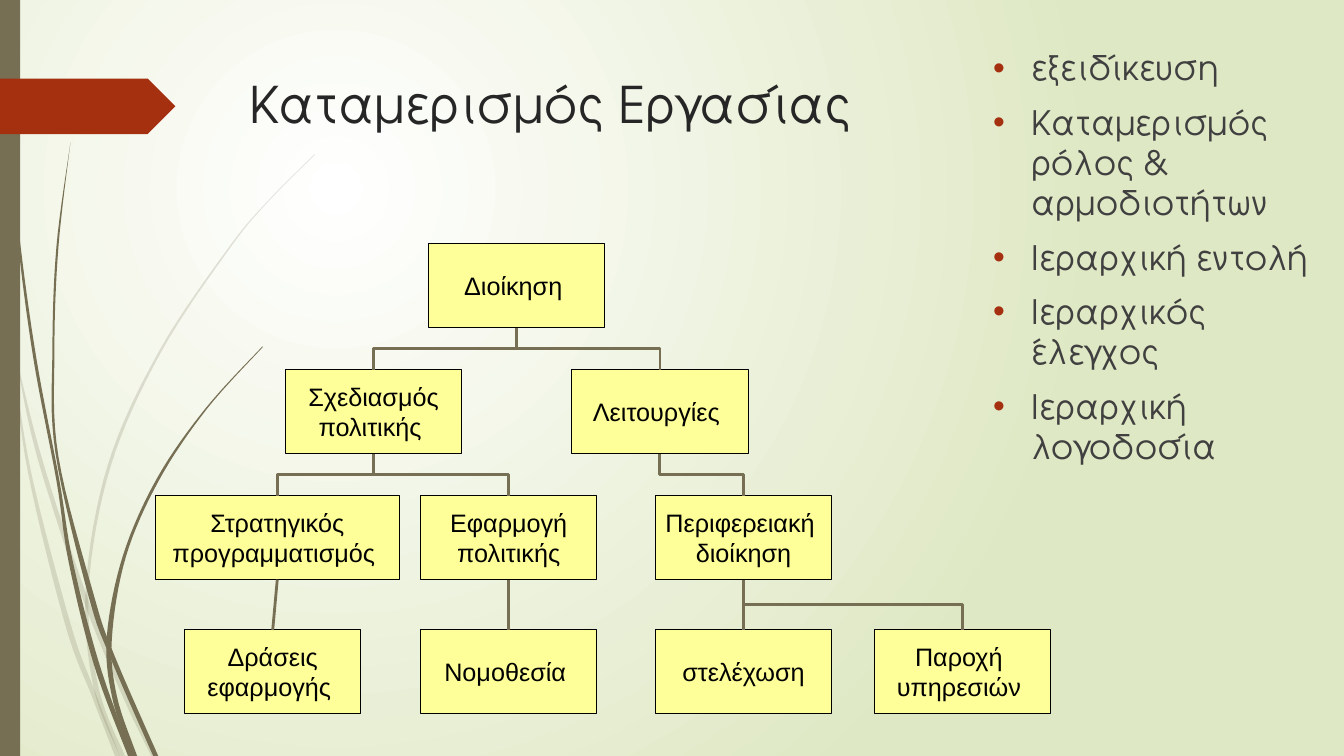
import pptx
import pptx.dml.color
import pptx.enum.dml
import pptx.enum.shapes
import pptx.enum.text
import pptx.oxml
import pptx.oxml.ns
import pptx.util
from lxml import etree

Inches, Pt = pptx.util.Inches, pptx.util.Pt
RGBColor = pptx.dml.color.RGBColor
qn = pptx.oxml.ns.qn
SHAPES = pptx.enum.shapes.MSO_SHAPE
CONNECTORS = pptx.enum.shapes.MSO_CONNECTOR
ALIGN = pptx.enum.text.PP_ALIGN
ANCHOR = pptx.enum.text.MSO_ANCHOR

WHITE = RGBColor(0xFF, 0xFF, 0xFF)
PALE_GREEN = RGBColor(0xDF, 0xE8, 0xC4)
OLIVE = RGBColor(0x76, 0x6F, 0x54)
RUST = RGBColor(0xA5, 0x30, 0x10)
YELLOW = RGBColor(0xFF, 0xFF, 0x99)
BLACK = RGBColor(0, 0, 0)
TITLE_GREY = RGBColor(0x26, 0x26, 0x26)
BODY_GREY = RGBColor(0x40, 0x40, 0x40)

HEADING_FONT = "TeX Gyre Adventor"
CHART_FONT = "Arial"

# Grass blades: left edge and right edge, both from tip to root, in inches
PALE_BLADES = [
    ([(0, 2.99), (0.11, 3.5), (0.28, 4.7), (0.65, 6.21), (0.92, 6.93), (1.14, 7.5)],
     [(0, 2.82), (0.12, 3.5), (0.31, 4.69), (0.7, 6.19), (0.93, 6.83), (1.19, 7.5)]),
    ([(0.14, 3.45), (0.32, 4.35), (0.58, 5.22), (0.88, 6.1), (1.23, 6.94), (1.5, 7.5)],
     [(0.14, 3.45), (0.36, 4.35), (0.62, 5.2), (0.92, 6.07), (1.27, 6.92), (1.55, 7.5)]),
    ([(3.12, 1.53), (2.68, 1.97), (2.28, 2.44), (1.58, 3.48), (1.07, 4.61),
      (0.85, 5.84), (0.93, 6.83), (1.19, 7.5)],
     [(3.12, 1.54), (2.68, 1.98), (2.29, 2.45), (1.6, 3.49), (1.1, 4.62),
      (0.88, 5.84), (0.98, 6.83), (1.24, 7.5)]),
]
DARK_BLADES = [
    ([(0.03, 0), (0.07, 1.1), (0.17, 2.33), (0.33, 3.55), (0.56, 4.77),
      (0.68, 5.57), (0.93, 6.59), (1.27, 7.5)],
     [(0.04, 0), (0.08, 1.09), (0.19, 2.32), (0.36, 3.55), (0.59, 4.77),
      (0.72, 5.56), (0.98, 6.57), (1.31, 7.5)]),
    ([(0.7, 1.41), (0.56, 2.45), (0.52, 3.49), (0.55, 4.49), (0.88, 5.92),
      (1.11, 6.56), (1.52, 7.5)],
     [(0.7, 1.41), (0.58, 2.45), (0.54, 3.49), (0.58, 4.53), (0.93, 5.9),
      (1.13, 6.49), (1.57, 7.5)]),
    ([(2.6, 3.44), (2.04, 4.05), (1.56, 4.74), (1.22, 5.51), (1.06, 6.31), (1.11, 6.91), (1.3, 7.5)],
     [(2.61, 3.44), (2.05, 4.06), (1.58, 4.76), (1.25, 5.52), (1.11, 6.33), (1.16, 6.91), (1.36, 7.5)]),
]

BULLETS = ["εξειδίκευση", "Καταμερισμός ρόλος & αρμοδιοτήτων", "Ιεραρχική εντολή",
           "Ιεραρχικός έλεγχος", "Ιεραρχική λογοδοσία"]

# Organisation chart: key -> (text, left, row, width), and parent-child pairs
ROW_TOPS = [0, 1.25, 2.5, 3.83]
UNIT_WIDTH, UNIT_HEIGHT = 1.75, 0.83
UNITS = {
    "management": ("Διοίκηση ", 2.71, 0, UNIT_WIDTH),
    "operations": ("Λειτουργίες ", 4.13, 1, UNIT_WIDTH),
    "policy": ("Σχεδιασμός πολιτικής ", 1.29, 1, UNIT_WIDTH),
    "strategy": ("Στρατηγικός προγραμματισμός ", 0, 2, 2.42),
    "execution": ("Εφαρμογή πολιτικής", 2.63, 2, UNIT_WIDTH),
    "regional": ("Περιφερειακή \nδιοίκηση", 4.96, 2, UNIT_WIDTH),
    "actions": ("Δράσεις εφαρμογής ", 0.29, 3, UNIT_WIDTH),
    "legislation": ("Νομοθεσία ", 2.63, 3, UNIT_WIDTH),
    "staffing": ("στελέχωση", 4.96, 3, UNIT_WIDTH),
    "services": ("Παροχή \nυπηρεσιών ", 7.13, 3, UNIT_WIDTH),
}
LINKS = [("management", "policy"), ("management", "operations"),
         ("policy", "strategy"), ("policy", "execution"), ("operations", "regional"),
         ("strategy", "actions"), ("execution", "legislation"),
         ("regional", "staffing"), ("regional", "services")]


def style_shape(shape, fill, line=None):
    shape.shadow.inherit = False
    shape.fill.solid()
    shape.fill.fore_color.rgb = fill
    if line is None:
        shape.line.fill.background()
    else:
        shape.line.color.rgb = line
        shape.line.width = Pt(0.75)


def set_font(paragraph, name, size, color):
    paragraph.font.name = name
    paragraph.font.size = Pt(size)
    paragraph.font.color.rgb = color


def paint_background(slide):
    fill = slide.background.fill
    fill.gradient()
    for stop, color in zip(fill.gradient_stops, (WHITE, PALE_GREEN)):
        stop.color.rgb = color
    fill.gradient_stops[0].position, fill.gradient_stops[1].position = 0, 1
    gradient = next(slide.background._cSld.iter(qn("a:gradFill")))
    gradient.remove(gradient.find(qn("a:lin")))
    circle = etree.SubElement(gradient, qn("a:path"), path="circle")
    etree.SubElement(circle, qn("a:fillToRect"), l="50000", t="50000", r="100000", b="100000")


def smooth_curve(points, steps=8):
    """Catmull-Rom curve through the points, in EMU."""
    padded = [points[0], *points, points[-1]]
    curve = []
    for a, b, c, d in zip(padded, padded[1:], padded[2:], padded[3:]):
        for t in (step / steps for step in range(steps)):
            curve.append(tuple(
                Inches(0.5 * (2 * q + (r - p) * t + (2 * p - 5 * q + 4 * r - s) * t ** 2
                              + (3 * q - p - 3 * r + s) * t ** 3))
                for p, q, r, s in zip(a, b, c, d)))
    return curve + [tuple(Inches(value) for value in points[-1])]


def draw_blade(slide, left_edge, right_edge, opacity):
    outline = smooth_curve(left_edge) + smooth_curve(right_edge)[::-1]
    builder = slide.shapes.build_freeform(*outline[0])
    builder.add_line_segments(outline[1:], close=True)
    blade = builder.convert_to_shape()
    style_shape(blade, OLIVE)
    if opacity < 100:
        color = next(blade.element.spPr.iter(qn("a:srgbClr")))
        etree.SubElement(color, qn("a:alpha"), val=str(opacity * 1000))


def draw_decoration(slide, page_height):
    for blades, opacity in ((PALE_BLADES, 20), (DARK_BLADES, 100)):
        for left_edge, right_edge in blades:
            draw_blade(slide, left_edge, right_edge, opacity)
    bar = slide.shapes.add_shape(SHAPES.RECTANGLE, 0, 0, Inches(0.2), page_height)
    style_shape(bar, OLIVE)
    tag = slide.shapes.add_shape(SHAPES.PENTAGON, 0, Inches(0.78), Inches(1.74), Inches(0.55))
    style_shape(tag, RUST)


def place(placeholder, left, top, width, height):
    placeholder.left, placeholder.top = Inches(left), Inches(top)
    placeholder.width, placeholder.height = Inches(width), Inches(height)
    frame = placeholder.text_frame
    frame.word_wrap = True
    frame.auto_size = pptx.enum.text.MSO_AUTO_SIZE.NONE
    frame.vertical_anchor = ANCHOR.TOP
    return frame


def fill_title(placeholder, *box):
    frame = place(placeholder, *box)
    frame.text = "Καταμερισμός Εργασίας"
    frame.paragraphs[0].alignment = ALIGN.LEFT
    set_font(frame.paragraphs[0], HEADING_FONT, 36, TITLE_GREY)


def fill_bullets(placeholder, *box):
    frame = place(placeholder, *box)
    frame.text = "\n".join(BULLETS)
    for index, para in enumerate(frame.paragraphs):
        properties = para._p.get_or_add_pPr()
        properties.set("marL", str(Inches(0.38)))
        properties.set("indent", str(-Inches(0.38)))
        bullet_color = etree.SubElement(properties, qn("a:buClr"))
        etree.SubElement(bullet_color, qn("a:srgbClr"), val=str(RUST))
        etree.SubElement(properties, qn("a:buFont"), typeface=CHART_FONT)
        etree.SubElement(properties, qn("a:buChar"), char="•")
        para.space_before = Pt(10 if index else 0)
        set_font(para, HEADING_FONT, 24, BODY_GREY)


def add_unit(slide, text, left, top, width):
    unit = slide.shapes.add_shape(SHAPES.RECTANGLE, Inches(left), Inches(top),
                                  Inches(width), Inches(UNIT_HEIGHT))
    style_shape(unit, YELLOW, BLACK)
    frame = unit.text_frame
    frame.word_wrap = True
    frame.vertical_anchor = ANCHOR.MIDDLE
    frame.text = text
    for para in frame.paragraphs:
        para.alignment = ALIGN.CENTER
        set_font(para, CHART_FONT, 18, BLACK)
    return unit


def link_units(slide, parent, child):
    x1, y1 = parent.left + parent.width // 2, parent.top + parent.height
    x2, y2 = child.left + child.width // 2, child.top
    straight = abs(x2 - x1) < Inches(0.1)
    kind = CONNECTORS.STRAIGHT if straight else CONNECTORS.ELBOW
    link = slide.shapes.add_connector(kind, x1, y1, x2, y2)
    link.begin_connect(parent, 2)
    link.end_connect(child, 0)
    link.line.color.rgb = OLIVE
    link.line.width = Pt(2)
    etree.SubElement(link.element.spPr, qn("a:effectLst"))
    if not straight:
        # Turn the elbow so that it leaves downwards
        link.width, link.height = y2 - y1, abs(x2 - x1)
        link.left = (x1 + x2 - link.width) // 2
        link.top = (y1 + y2 - link.height) // 2
        transform = link.element.spPr.find(qn("a:xfrm"))
        transform.set("rot", str((90 if x2 < x1 else 270) * 60000))
        transform.set("flipH", "0" if x2 < x1 else "1")


def draw_organisation(slide, left, top):
    units = {key: add_unit(slide, text, left + offset, top + ROW_TOPS[row], width)
             for key, (text, offset, row, width) in UNITS.items()}
    for parent, child in LINKS:
        link_units(slide, units[parent], units[child])


def main():
    deck = pptx.Presentation()
    deck.slide_width, deck.slide_height = Inches(13.33), Inches(7.5)
    slide = deck.slides.add_slide(deck.slide_layouts[1])
    paint_background(slide)
    draw_decoration(slide, deck.slide_height)
    fill_title(slide.shapes.title, 2.37, 0.68, 10.21, 1.4)
    fill_bullets(slide.placeholders[1], 9.75, 0.42, 3.41, 5.58)
    draw_organisation(slide, 1.54, 2.42)
    deck.save("out.pptx")


if __name__ == "__main__":
    main()
